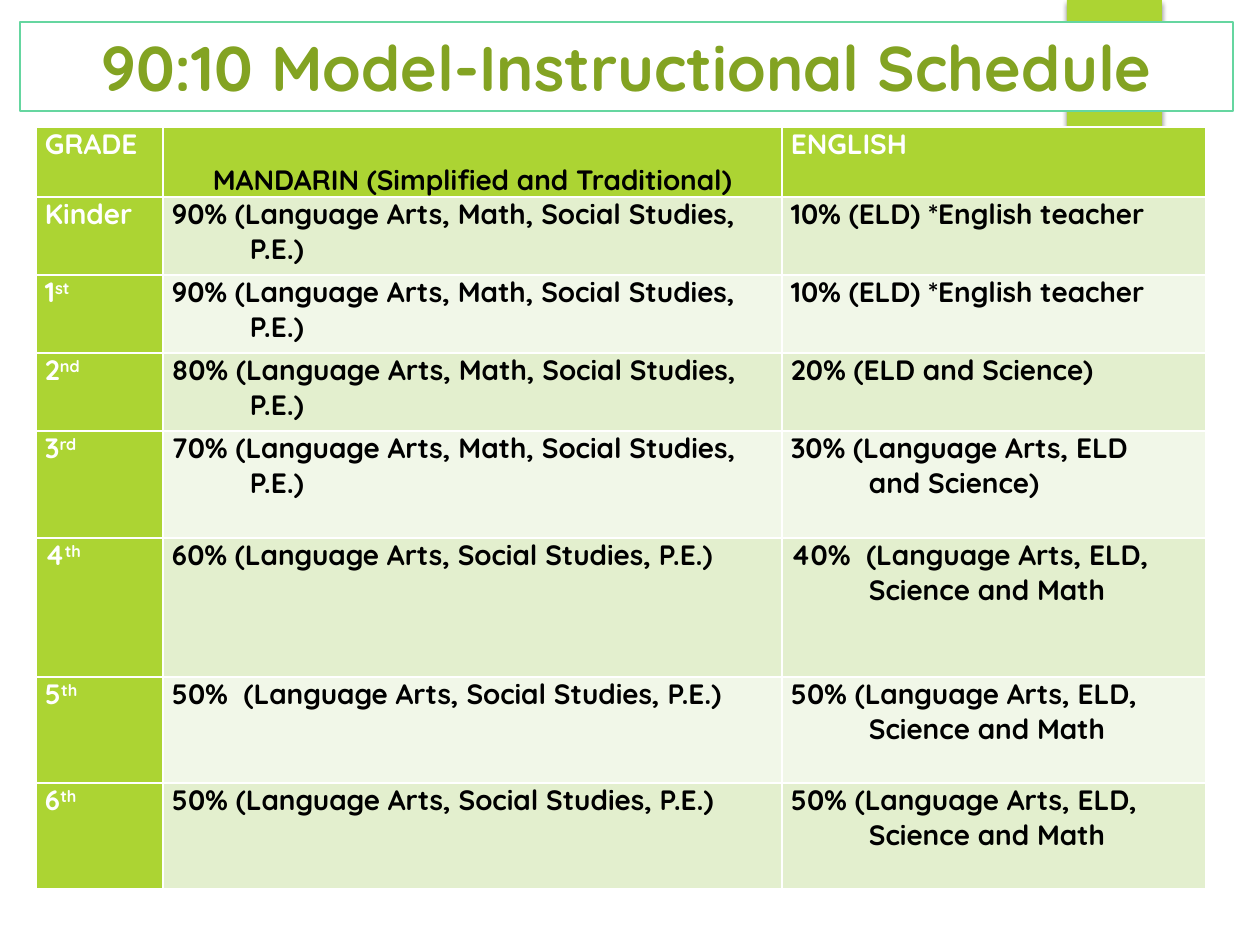
from lxml import etree
from pptx import Presentation
from pptx import util as u
from pptx.dml.color import RGBColor
from pptx.enum import shapes, text
from pptx.oxml import ns

TITLE = "90:10 Model-Instructional Schedule"
HEADERS = ["GRADE", "MANDARIN (Simplified and Traditional)", "ENGLISH"]
FULL_PROGRAM = ["(Language Arts, Math, Social Studies,", "P.E.)"]
NO_MATH = ["(Language Arts, Social Studies, P.E.)"]
WITH_MATH = ["(Language Arts, ELD,", "Science and Math"]
TEACHER = ["(ELD) *English teacher"]
GRADES = [
    (("Kinder", ""), "90% ", FULL_PROGRAM, "10% ", TEACHER, 78),
    (("1", "st"), "90% ", FULL_PROGRAM, "10% ", TEACHER, 78),
    (("2", "nd"), "80% ", FULL_PROGRAM, "20% ", ["(ELD and Science)"], 78),
    (("3", "rd"), "70% ", FULL_PROGRAM, "30% ", ["(Language Arts, ELD", "and Science)"], 107),
    (("4", "th"), "60% ", NO_MATH, "40%  ", WITH_MATH, 139),
    (("5", "th"), "50%  ", NO_MATH, "50% ", WITH_MATH, 106),
    (("6", "th"), "50% ", NO_MATH, "50% ", WITH_MATH, 106),
]
COLORS = {
    "green": "ACD433", "title": "83A322", "mint": "65D6A0", "white": "FFFFFF",
    "black": "000000", "band_dark": "E3EFCE", "band_light": "F1F7E8",
}
FONT = "Quicksand"
COLUMN_WIDTHS = [127, 619, 424]
HEADER_HEIGHT = 70
CELL_MARGIN = 9
CONTINUATION_INDENT = 78


def px(value):
    return u.Emu(round(value * 914400 / 126))


def color(name):
    return RGBColor.from_string(COLORS[name])


def paint(target, name):
    target.fill.solid()
    target.fill.fore_color.rgb = color(name)


def add_run(paragraph, words, size, name, raised=False):
    run = paragraph.add_run()
    run.text = words
    run.font.name = FONT
    run.font.size = u.Pt(size)
    run.font.bold = True
    run.font.color.rgb = color(name)
    if raised:
        run.font._element.set("baseline", "30000")


def prepare_cell(cell, fill):
    paint(cell, fill)
    cell.margin_left = cell.margin_right = px(CELL_MARGIN)
    cell.margin_top = cell.margin_bottom = 0
    return cell.text_frame


def write_subjects(cell, fill, share, lines):
    frame = prepare_cell(cell, fill)
    add_run(frame.paragraphs[0], share + lines[0], 16, "black")
    for line in lines[1:]:
        paragraph = frame.add_paragraph()
        paragraph._p.get_or_add_pPr().set("marL", str(px(CONTINUATION_INDENT)))
        add_run(paragraph, line, 16, "black")


def add_accent_bar(slide):
    bar = slide.shapes.add_shape(
        shapes.MSO_SHAPE.RECTANGLE, px(1067), 0, px(95), px(151))
    paint(bar, "green")
    bar.line.fill.background()
    bar.shadow.inherit = False
    effects = bar._element.spPr.find(ns.qn("a:effectLst"))
    shadow = etree.SubElement(effects, ns.qn("a:outerShdw"), blurRad="38100",
                              dist="25400", dir="5400000", rotWithShape="0")
    shade = etree.SubElement(shadow, ns.qn("a:srgbClr"), val=COLORS["black"])
    etree.SubElement(shade, ns.qn("a:alpha"), val="45000")


def add_schedule(slide):
    heights = [HEADER_HEIGHT] + [grade[-1] for grade in GRADES]
    table = slide.shapes.add_table(
        len(heights), len(COLUMN_WIDTHS), px(36), px(127),
        px(sum(COLUMN_WIDTHS)), px(sum(heights))).table
    table.first_col = True
    for column, width in zip(table.columns, COLUMN_WIDTHS):
        column.width = px(width)
    for row, height in zip(table.rows, heights):
        row.height = px(height)

    for index, header in enumerate(HEADERS):
        cell = table.cell(0, index)
        paragraph = prepare_cell(cell, "green").paragraphs[0]
        is_mandarin = index == 1
        if is_mandarin:
            paragraph.alignment = text.PP_ALIGN.CENTER
            cell.vertical_anchor = text.MSO_ANCHOR.BOTTOM
        add_run(paragraph, header, 16, "black" if is_mandarin else "white")

    for row, grade in enumerate(GRADES, 1):
        (name, suffix), mandarin_share, mandarin, english_share, english, _ = grade
        band = "band_dark" if row % 2 else "band_light"
        paragraph = prepare_cell(table.cell(row, 0), "green").paragraphs[0]
        add_run(paragraph, name, 16, "white")
        if suffix:
            add_run(paragraph, suffix, 16, "white", raised=True)
        write_subjects(table.cell(row, 1), band, mandarin_share, mandarin)
        write_subjects(table.cell(row, 2), band, english_share, english)


def add_title(slide):
    title = slide.shapes.title
    title.left, title.top, title.width, title.height = map(px, (20, 22, 1213, 89))
    paint(title, "white")
    title.line.color.rgb = color("mint")
    title.line.width = u.Pt(1.5)
    title.text_frame.vertical_anchor = text.MSO_ANCHOR.MIDDLE
    paragraph = title.text_frame.paragraphs[0]
    paragraph.alignment = text.PP_ALIGN.CENTER
    add_run(paragraph, TITLE, 36, "title")
    slide.shapes._spTree.append(title._element)


def main():
    presentation = Presentation()
    presentation.slide_width = u.Inches(10)
    presentation.slide_height = u.Inches(7.5)
    slide = presentation.slides.add_slide(presentation.slide_layouts[5])
    add_accent_bar(slide)
    add_schedule(slide)
    add_title(slide)
    presentation.save("out.pptx")


if __name__ == "__main__":
    main()
